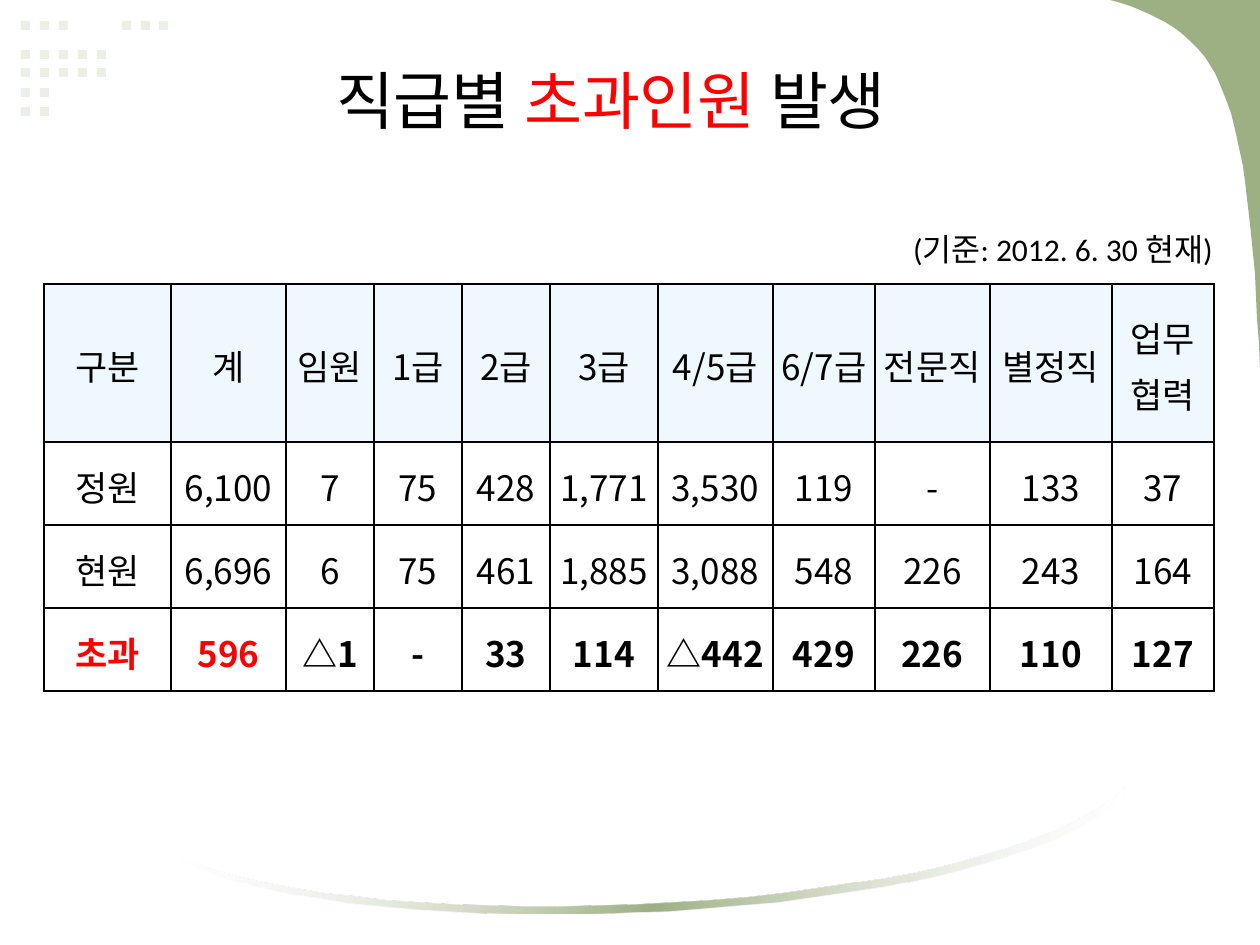
from copy import deepcopy
from lxml.etree import SubElement
from pptx import Presentation
from pptx.dml.color import RGBColor
from pptx.enum.shapes import MSO_SHAPE
from pptx.enum.text import MSO_ANCHOR, PP_ALIGN
from pptx.oxml.ns import qn
from pptx.util import Pt

RECT = MSO_SHAPE.RECTANGLE
MID = MSO_ANCHOR.MIDDLE
MID_X, RIGHT = PP_ALIGN.CENTER, PP_ALIGN.RIGHT
BLACK = RGBColor(0x00, 0x00, 0x00)
WHITE = RGBColor(0xFF, 0xFF, 0xFF)
RED = RGBColor(0xFF, 0x00, 0x00)
GREEN = RGBColor(0x9C, 0xB0, 0x84)
PALE = RGBColor(0xEB, 0xEF, 0xE6)
BLUE = RGBColor(0xF0, 0xF8, 0xFF)
KOREAN = "Noto Sans CJK KR"
PX = 914400 / 126


def px(*nums):
    return [round(n * PX) for n in nums]


def style(para, size, face, color, align):
    para.alignment = align
    font = para.font
    font.size, font.name = Pt(size), face
    font.color.rgb = color
    SubElement(font._element, qn("a:ea")).set("typeface", KOREAN)


deck = Presentation()
deck.slide_width, deck.slide_height = px(1260, 945)
slide = deck.slides.add_slide(deck.slide_layouts[6])
shapes = slide.shapes

DOTS = [
    (21, (21, 40, 59, 122, 141, 159)),
    (50, (21, 40, 59, 78, 97)),
    (68, (21, 40, 59, 78, 97)),
    (88, (21, 40)),
    (107, (21, 40)),
]
for top, lefts in DOTS:
    for left in lefts:
        dot = shapes.add_shape(RECT, *px(left, top, 9, 9))
        dot.shadow.inherit = False
        dot.fill.solid()
        dot.fill.fore_color.rgb = PALE
        dot.line.fill.background()

CORNER = [((1260, 367), (1247, 91), (1225, 32), (1110, 0))]
SWOOSH = [
    ((1124, 796), (992, 926), (354, 951), (179, 859)),
    ((179, 856), (365, 942), (994, 916), (1124, 788)),
]
STEPS = 32
forms = []
for start, curves in [((1260, 0), CORNER), ((1124, 788), SWOOSH)]:
    pen = shapes.build_freeform(*start, scale=PX)
    for curve in curves:
        dots = []
        for step in range(STEPS + 1):
            t = step / STEPS
            u = 1 - t
            parts = (u**3, 3 * u * u * t, 3 * u * t * t, t**3)
            dots.append([sum(w * p[axis] for w, p in zip(parts, curve)) for axis in (0, 1)])
        pen.add_line_segments(dots, close=curve is curves[-1])
    form = pen.convert_to_shape()
    form.shadow.inherit = False
    form.line.fill.background()
    forms.append(form)

corner, swoosh = forms
corner.fill.solid()
corner.fill.fore_color.rgb = GREEN
swoosh.fill.gradient()
swoosh.fill.gradient_angle = 0
stops = swoosh._element.find(".//" + qn("a:gsLst"))
stops.insert(1, deepcopy(stops[0]))
for stop, spot, color in zip(swoosh.fill.gradient_stops, (0, 0.5, 1), (WHITE, GREEN, WHITE)):
    stop.position = spot
    stop.color.rgb = color
for end in (stops[0], stops[2]):
    SubElement(end[0], qn("a:alpha")).set("val", "30000")

title = shapes.add_textbox(*px(44, 37, 1134, 124)).text_frame
title.word_wrap = True
title.vertical_anchor = MID
para = title.paragraphs[0]
style(para, 36, KOREAN, BLACK, MID_X)
for text, color in [("직급별 ", BLACK), ("초과인원", RED), (" 발생", BLACK)]:
    run = para.add_run()
    run.text = text
    run.font.color.rgb = color

ROWS = [
    ["구분", "계", "임원", "1급", "2급", "3급", "4/5급", "6/7급", "전문직", "별정직", "업무\n협력"],
    ["정원", "6,100", "7", "75", "428", "1,771", "3,530", "119", "-", "133", "37"],
    ["현원", "6,696", "6", "75", "461", "1,885", "3,088", "548", "226", "243", "164"],
    ["초과", "596", "△1", "-", "33", "114", "△442", "429", "226", "110", "127"],
]
WIDTHS = [127, 115, 88, 88, 88, 108, 115, 102, 115, 122, 102]
HEIGHTS = [158, 83, 83, 83]
last_row, last_col = len(ROWS) - 1, len(WIDTHS) - 1
frame = shapes.add_table(
    len(ROWS), len(WIDTHS), *px(44, 284, sum(WIDTHS), sum(HEIGHTS))
)
table = frame.table
table.first_row = table.horz_banding = False
for col, width in zip(table.columns, px(*WIDTHS)):
    col.width = width
for row, height in zip(table.rows, px(*HEIGHTS)):
    row.height = height

for r, row in enumerate(ROWS):
    for c, text in enumerate(row):
        cell = table.cell(r, c)
        cell.text = text
        cell.vertical_anchor = MID
        cell.margin_left, cell.margin_right, cell.margin_top, cell.margin_bottom = px(2, 2, 2, 2)
        for para in cell.text_frame.paragraphs:
            style(para, 20, KOREAN, RED if r == last_row and c < 2 else BLACK, MID_X)
            para.line_spacing = 1.1
            para.font.bold = r == last_row
        props = cell._tc.get_or_add_tcPr()
        sides = {
            "a:lnL": c < 2,
            "a:lnR": c in (0, last_col),
            "a:lnT": r < 2,
            "a:lnB": r in (0, last_row),
        }
        for tag, thick in sides.items():
            line = SubElement(props, qn(tag), w=str(Pt(1.5 if thick else 1)))
            fill = SubElement(line, qn("a:solidFill"))
            SubElement(fill, qn("a:srgbClr"), val=str(BLACK))
        if r == 0:
            cell.fill.solid()
            cell.fill.fore_color.rgb = BLUE
        else:
            cell.fill.background()

date = shapes.add_textbox(*px(868, 224, 357, 50)).text_frame
date.word_wrap = False
para = date.paragraphs[0]
para.text = "(기준: 2012. 6. 30 현재)"
style(para, 18, "Calibri", BLACK, RIGHT)

deck.save("out.pptx")
